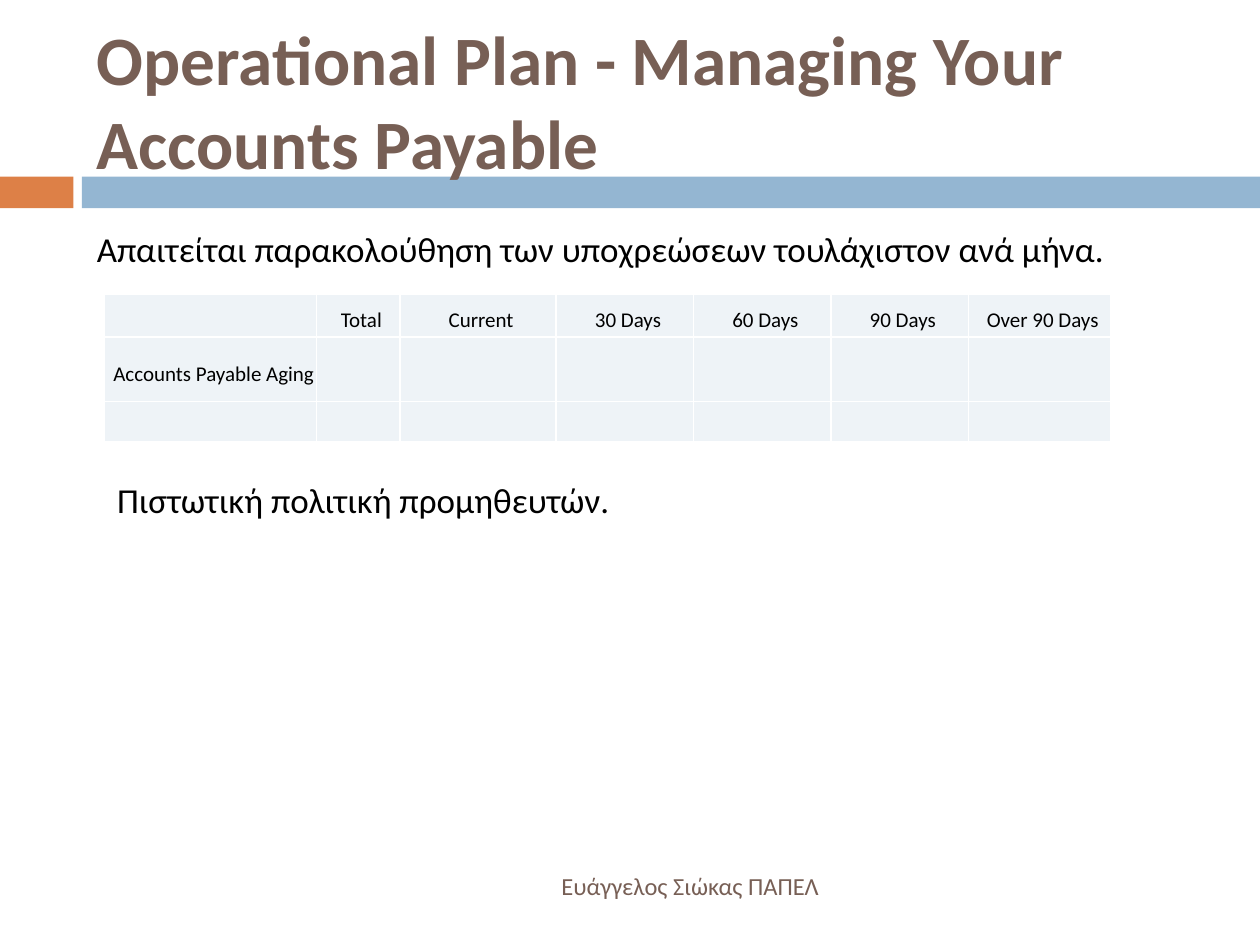
"""Build the accounts payable slide of an operational plan."""
from dataclasses import dataclass

from lxml import etree
from pptx import Presentation
from pptx.dml.color import RGBColor
from pptx.enum import shapes, text
from pptx.oxml.ns import qn
from pptx.util import Cm, Pt


@dataclass(frozen=True)
class Theme:
    font: str = "Calibri"
    brown: str = "775F55"
    black: str = "000000"
    orange: str = "DD8047"
    blue: str = "94B6D2"
    cell: str = "EEF3F7"
    border: str = "FFFFFF"
    title_size: float = 39.6
    body_size: float = 20
    footer_size: float = 14
    table_size: float = 12


@dataclass(frozen=True)
class Box:
    left: float
    top: float
    width: float
    height: float

    def lengths(self) -> tuple:
        return Cm(self.left), Cm(self.top), Cm(self.width), Cm(self.height)


@dataclass(frozen=True)
class Bar:
    box: Box
    color: str


THEME = Theme()
BARS = (
    Bar(Box(0, 3.56, 1.48, 0.64), THEME.orange),
    Bar(Box(1.65, 3.56, 23.75, 0.64), THEME.blue),
)
TITLE_BOX = Box(1.7, 0.64, 22.66, 2.74)
BODY_BOX = Box(1.7, 4.45, 22.66, 12.5)
FOOTER_BOX = Box(1.7, 17.35, 15.06, 1.02)
TABLE_BOX = Box(2.11, 5.93, 20.28, 2.97)
POLICY_BOX = Box(2.11, 9.53, 20.32, 1.12)
COLUMN_WIDTHS = (4.27, 1.68, 3.15, 2.77, 2.77, 2.77, 2.87)
ROW_HEIGHTS = (0.86, 1.3, 0.81)
AGING_ROWS = (
    ("", "Total", "Current", "30 Days", "60 Days", "90 Days", "Over 90 Days"),
    ("Accounts Payable Aging",) + ("",) * 6,
    ("",) * 7,
)


def write(frame, wording: str, *, size: float, color: str = THEME.black, bold: bool = False,
          align=text.PP_ALIGN.LEFT, space_before: float = 0) -> None:
    """Put one formatted paragraph into a text frame."""
    paragraph = frame.paragraphs[0]
    paragraph.alignment = align
    paragraph.space_before = Pt(space_before)
    run = paragraph.add_run()
    run.text = wording
    run.font.name = THEME.font
    run.font.size = Pt(size)
    run.font.bold = bold
    run.font.color.rgb = RGBColor.from_string(color)


def place(shape, box: Box, anchor=text.MSO_ANCHOR.TOP):
    """Move a placeholder or text box and return its text frame."""
    shape.left, shape.top, shape.width, shape.height = box.lengths()
    frame = shape.text_frame
    frame.word_wrap = True
    frame.auto_size = text.MSO_AUTO_SIZE.NONE
    frame.vertical_anchor = anchor
    return frame


def remove_bullet(paragraph) -> None:
    """Turn off the bullet and hanging indent of a paragraph."""
    properties = paragraph._p.get_or_add_pPr()
    properties.set("marL", "0")
    properties.set("indent", "0")
    etree.SubElement(properties, qn("a:buNone"))


def add_bar(slide, bar: Bar, position: int) -> None:
    """Draw a plain bar behind the placeholders."""
    shape = slide.shapes.add_shape(shapes.MSO_SHAPE.RECTANGLE, *bar.box.lengths())
    shape.shadow.inherit = False
    shape.fill.solid()
    shape.fill.fore_color.rgb = RGBColor.from_string(bar.color)
    shape.line.fill.background()
    slide.shapes._spTree.insert(position, shape._element)


def style_cell(cell) -> None:
    """Give a cell its fill, thin borders and zero margins."""
    cell.margin_left = cell.margin_right = cell.margin_top = cell.margin_bottom = 0
    cell.vertical_anchor = text.MSO_ANCHOR.MIDDLE
    cell.fill.solid()
    cell.fill.fore_color.rgb = RGBColor.from_string(THEME.cell)
    properties = cell._tc.get_or_add_tcPr()
    for index, side in enumerate(("a:lnL", "a:lnR", "a:lnT", "a:lnB")):
        line = etree.Element(qn(side), w=str(Pt(1)))
        fill = etree.SubElement(line, qn("a:solidFill"))
        etree.SubElement(fill, qn("a:srgbClr"), val=THEME.border)
        properties.insert(index, line)


def add_aging_table(slide) -> None:
    """Add the table of payables by age."""
    table = slide.shapes.add_table(len(ROW_HEIGHTS), len(COLUMN_WIDTHS), *TABLE_BOX.lengths()).table
    for column, width in zip(table.columns, COLUMN_WIDTHS):
        column.width = Cm(width)
    for row, height, labels in zip(table.rows, ROW_HEIGHTS, AGING_ROWS):
        row.height = Cm(height)
        for cell, label in zip(row.cells, labels):
            style_cell(cell)
            if label:
                cell.margin_top = Cm(0.2)
                cell.margin_left = Cm(0.13)
                write(cell.text_frame, label, size=THEME.table_size, align=text.PP_ALIGN.CENTER)


def main() -> None:
    """Build and save the presentation."""
    presentation = Presentation()
    presentation.slide_width, presentation.slide_height = Cm(25.4), Cm(19.05)
    slide = presentation.slides.add_slide(presentation.slide_layouts[1])
    for position, bar in enumerate(BARS, start=2):
        add_bar(slide, bar, position)

    title = place(slide.shapes.title, TITLE_BOX, text.MSO_ANCHOR.MIDDLE)
    write(title, "Operational Plan - Managing Your Accounts Payable",
          size=THEME.title_size, color=THEME.brown, bold=True)
    body = place(slide.placeholders[1], BODY_BOX)
    write(body, "Απαιτείται παρακολούθηση των υποχρεώσεων τουλάχιστον ανά μήνα.",
          size=THEME.body_size, space_before=7)
    remove_bullet(body.paragraphs[0])

    footer = place(slide.shapes.add_textbox(*FOOTER_BOX.lengths()), FOOTER_BOX, text.MSO_ANCHOR.MIDDLE)
    write(footer, "Ευάγγελος Σιώκας ΠΑΠΕΛ", size=THEME.footer_size, color=THEME.brown,
          align=text.PP_ALIGN.RIGHT)
    add_aging_table(slide)
    policy = place(slide.shapes.add_textbox(*POLICY_BOX.lengths()), POLICY_BOX)
    write(policy, "Πιστωτική πολιτική προμηθευτών.", size=THEME.body_size, space_before=7)
    presentation.save("out.pptx")


if __name__ == "__main__":
    main()
